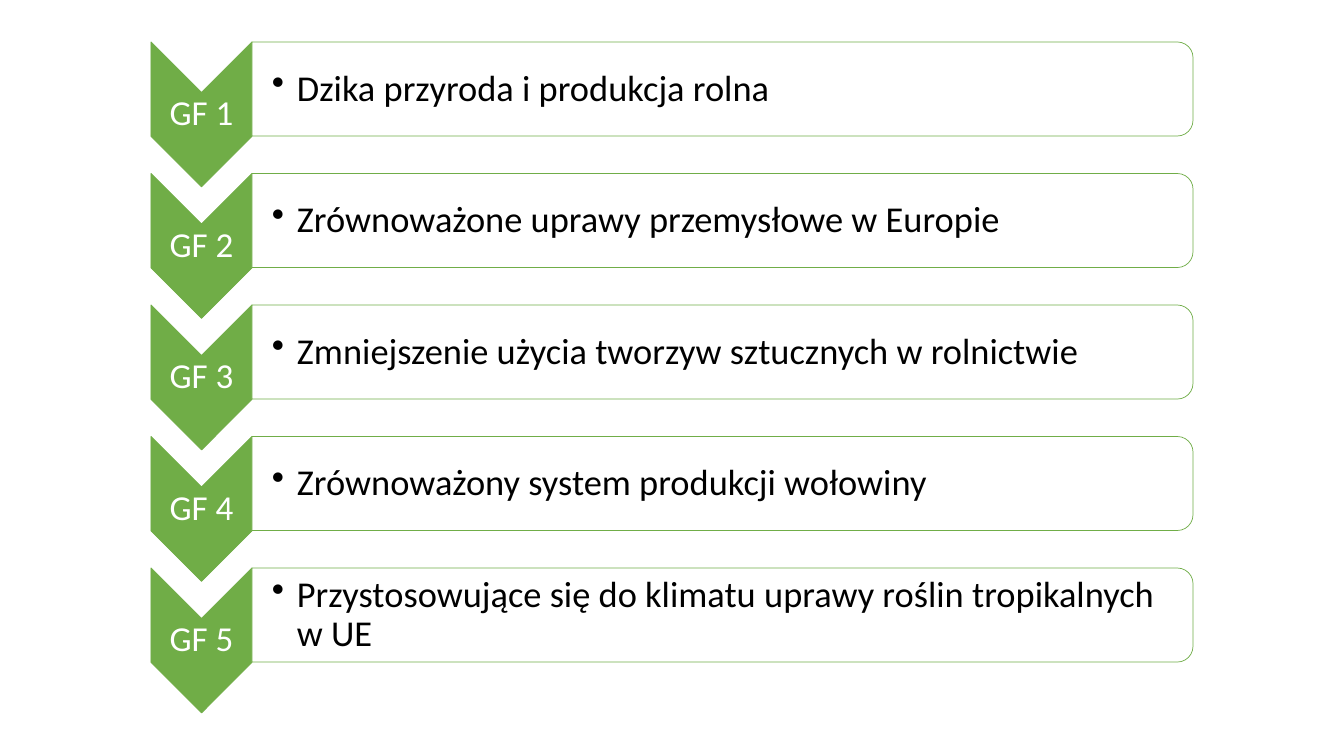
"""Build a slide listing five focus groups as chevrons with topic panels."""
from dataclasses import dataclass
from lxml.etree import SubElement
from pptx import Presentation
from pptx.dml.color import RGBColor
from pptx.enum.shapes import MSO_SHAPE as Shape
from pptx.enum.text import MSO_ANCHOR as Anchor, PP_ALIGN as Align
from pptx.oxml.ns import qn
from pptx.util import Pt

TOPICS = [
    ("GF 1", "Dzika przyroda i produkcja rolna"),
    ("GF 2", "Zrównoważone uprawy przemysłowe w Europie"),
    ("GF 3", "Zmniejszenie użycia tworzyw sztucznych w rolnictwie"),
    ("GF 4", "Zrównoważony system produkcji wołowiny"),
    ("GF 5", "Przystosowujące się do klimatu uprawy roślin tropikalnych w UE"),
]


@dataclass(frozen=True)
class Theme:
    font: str = "Calibri"
    green: RGBColor = RGBColor(0x70, 0xAD, 0x47)
    white: RGBColor = RGBColor(0xFF, 0xFF, 0xFF)
    black: RGBColor = RGBColor(0, 0, 0)
    label_size: int = 25
    topic_size: int = 26
    outline: float = 0.5
    panel_alpha: int = 90


THEME = Theme()
SLIDE_W, SLIDE_H = 1344, 756
FIRST_TOP, LAST_TOP = 42, 568
CHEVRON_LEFT, CHEVRON_W, CHEVRON_H = 151, 101, 145
PANEL_LEFT, PANEL_W, PANEL_H = CHEVRON_LEFT + CHEVRON_W, 941, 94
LABEL_DROP, LABEL_H = 51, 43
TOPIC_DROP, TOPIC_W, TOPIC_H = 5, 936, 85
INSET, TOPIC_INSET, HANGING = 2, 20, 25


def px(length):
    return round(length * 914400 / 100.8)


def add_turned_shape(page, kind, left, top, width, height, fill):
    """Add a shape turned a quarter clockwise that covers the given area."""
    shift = (width - height) / 2
    shape = page.shapes.add_shape(
        kind, px(left + shift), px(top - shift), px(height), px(width))
    shape.rotation = 90
    shape.shadow.inherit = False
    shape.fill.solid()
    shape.fill.fore_color.rgb = fill
    shape.line.color.rgb = THEME.green
    shape.line.width = Pt(THEME.outline)
    return shape


def add_text(page, text, left, top, width, height, inset, size, color):
    """Add a vertically centred text box and return its paragraph."""
    box = page.shapes.add_textbox(px(left), px(top), px(width), px(height))
    frame = box.text_frame
    frame.word_wrap = True
    frame.vertical_anchor = Anchor.MIDDLE
    frame.margin_left = px(inset)
    frame.margin_top = frame.margin_right = frame.margin_bottom = px(INSET)
    frame.text = text
    para = frame.paragraphs[0]
    para.line_spacing = 0.9
    span = para.runs[0]
    span.font.name = THEME.font
    span.font.size = Pt(size)
    span.font.color.rgb = color
    return para


def add_bullet(para):
    """Give a paragraph a hanging bullet."""
    properties = para._p.get_or_add_pPr()
    properties.set("marL", str(px(HANGING)))
    properties.set("indent", str(-px(HANGING)))
    SubElement(properties, qn("a:buChar")).set("char", "•")


def add_topic(page, top, label, topic):
    """Add one chevron with its label and the topic panel beside it."""
    add_turned_shape(page, Shape.CHEVRON, CHEVRON_LEFT, top,
                     CHEVRON_W, CHEVRON_H, THEME.green)
    label_para = add_text(page, label, CHEVRON_LEFT, top + LABEL_DROP, CHEVRON_W,
                          LABEL_H, INSET, THEME.label_size, THEME.white)
    label_para.alignment = Align.CENTER
    panel = add_turned_shape(page, Shape.ROUND_2_SAME_RECTANGLE, PANEL_LEFT, top,
                             PANEL_W, PANEL_H, THEME.white)
    tint = panel._element.spPr.find(qn("a:solidFill"))[0]
    SubElement(tint, qn("a:alpha")).set("val", str(THEME.panel_alpha * 1000))
    topic_para = add_text(page, topic, PANEL_LEFT, top + TOPIC_DROP, TOPIC_W,
                          TOPIC_H, TOPIC_INSET, THEME.topic_size, THEME.black)
    add_bullet(topic_para)


def main():
    """Lay the topics out at equal steps and save the deck."""
    deck = Presentation()
    deck.slide_width, deck.slide_height = px(SLIDE_W), px(SLIDE_H)
    page = deck.slides.add_slide(deck.slide_layouts[6])
    step = (LAST_TOP - FIRST_TOP) / (len(TOPICS) - 1)
    for index, (label, topic) in enumerate(TOPICS):
        add_topic(page, FIRST_TOP + index * step, label, topic)
    deck.save("out.pptx")


if __name__ == "__main__":
    main()
